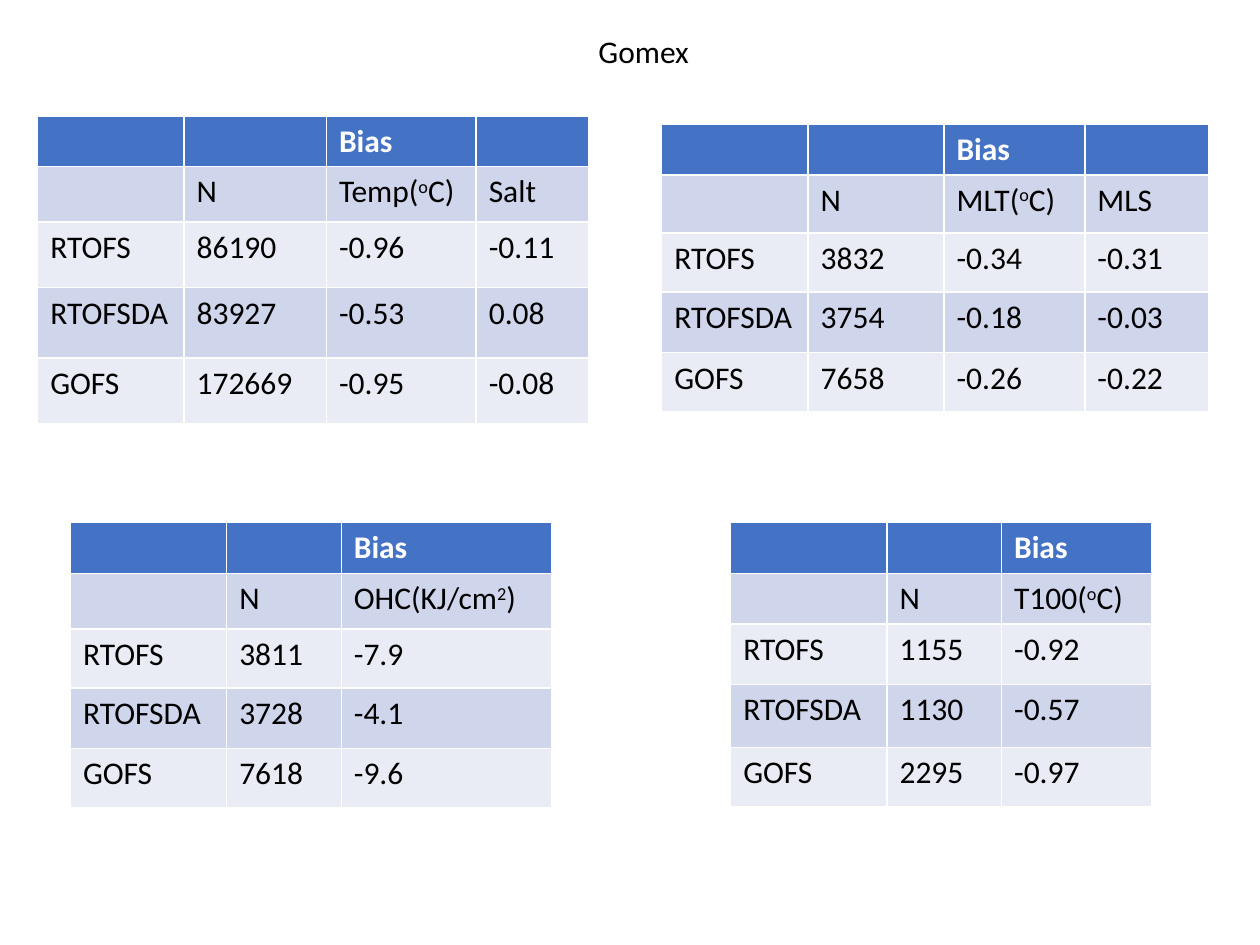
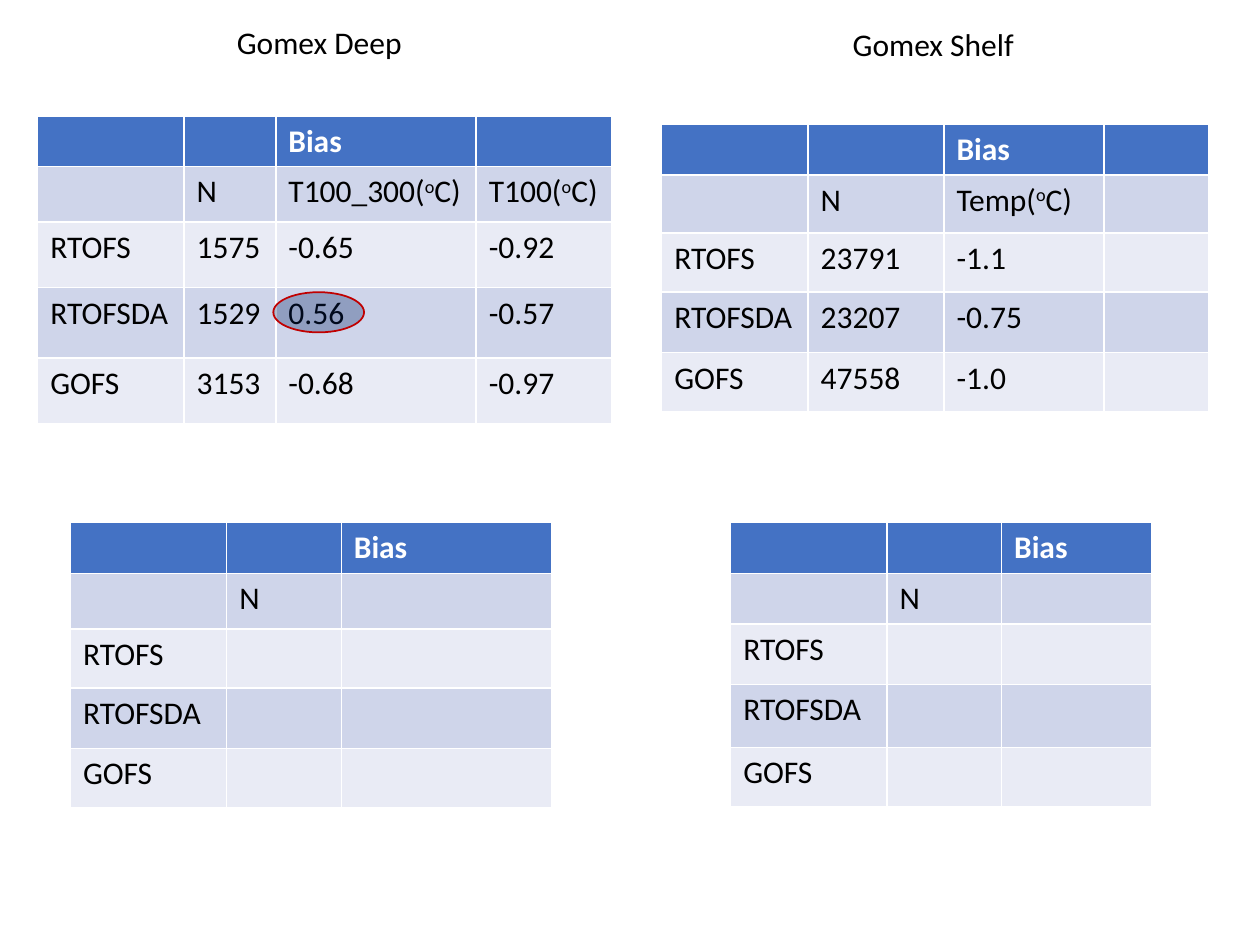
"""Build two slides of ocean model bias tables for the Gomex region."""

from lxml.etree import SubElement
from pptx import Presentation
from pptx.dml.color import RGBColor
from pptx.enum.shapes import MSO_SHAPE
from pptx.enum.text import MSO_ANCHOR, MSO_AUTO_SIZE, PP_ALIGN
from pptx.oxml.ns import qn
from pptx.util import Cm, Pt

FONT = "Calibri"
TEXT_SIZE = Pt(18)
COLORS = {
    "header": "4472C4",
    "band_dark": "CFD5EA",
    "band_light": "E9EBF5",
    "header_text": "FFFFFF",
    "text": "000000",
    "mark_fill": "002060",
    "mark_line": "C00000",
}
MODELS = ["RTOFS", "RTOFSDA", "GOFS"]

POSITIONS = {
    "top_left": {"at": (0.76, 2.34), "rows": [1.02, 1.12, 1.32, 1.42, 1.32]},
    "top_right": {"at": (13.34, 2.51), "rows": [1.02, 1.17, 1.19, 1.22, 1.19]},
    "bottom_left": {"at": (1.42, 10.52), "rows": [1.04, 1.12, 1.19, 1.22, 1.19]},
    "bottom_right": {"at": (14.73, 10.52), "rows": [1.04, 0.97, 1.22, 1.27, 1.19]},
}

# Text between carets is superscript.
SLIDES = [
    {
        "headings": [("Gomex", (11.81, 0.51, 2.36, 1.02))],
        "tables": {
            "top_left": {
                "widths": [2.95, 2.87, 3.02, 2.26],
                "columns": [
                    ("N", "86190", "83927", "172669"),
                    ("Temp(^o^C)", "-0.96", "-0.53", "-0.95"),
                    ("Salt", "-0.11", "0.08", "-0.08"),
                ],
            },
            "top_right": {
                "widths": [2.95, 2.74, 2.84, 2.49],
                "columns": [
                    ("N", "3832", "3754", "7658"),
                    ("MLT(^o^C)", "-0.34", "-0.18", "-0.26"),
                    ("MLS", "-0.31", "-0.03", "-0.22"),
                ],
            },
            "bottom_left": {
                "widths": [3.15, 2.31, 4.24],
                "columns": [
                    ("N", "3811", "3728", "7618"),
                    ("OHC(KJ/cm^2^)", "-7.9", "-4.1", "-9.6"),
                ],
            },
            "bottom_right": {
                "widths": [3.15, 2.31, 3.02],
                "columns": [
                    ("N", "1155", "1130", "2295"),
                    ("T100(^o^C)", "-0.92", "-0.57", "-0.97"),
                ],
            },
        },
        "marks": [],
    },
    {
        "headings": [
            ("Gomex Deep", (4.52, 0.33, 3.89, 1.02)),
            ("Gomex Shelf", (16.94, 0.38, 3.81, 1.02)),
        ],
        "tables": {
            "top_left": {
                "widths": [2.95, 1.85, 4.04, 2.74],
                "columns": [
                    ("N", "1575", "1529", "3153"),
                    ("T100_300(^o^C)", "-0.65", "0.56", "-0.68"),
                    ("T100(^o^C)", "-0.92", "-0.57", "-0.97"),
                ],
            },
            "top_right": {
                "widths": [2.95, 2.74, 3.23, 2.11],
                "columns": [
                    ("N", "23791", "23207", "47558"),
                    ("Temp(^o^C)", "-1.1", "-0.75", "-1.0"),
                    (),
                ],
            },
            "bottom_left": {"widths": [3.15, 2.31, 4.24], "columns": [("N",), ()]},
            "bottom_right": {"widths": [3.15, 2.31, 3.02], "columns": [("N",), ()]},
        },
        "marks": [(6.02, 5.38, 0.81, 1.83)],
    },
]


def rgb(name):
    return RGBColor.from_string(COLORS[name])


def write_text(paragraph, text, color, bold=False):
    for index, part in enumerate(text.split("^")):
        if part:
            run = paragraph.add_run()
            run.text = part
            if index % 2:
                run._r.get_or_add_rPr().set("baseline", "30000")
    paragraph.font.name = FONT
    paragraph.font.size = TEXT_SIZE
    paragraph.font.bold = bold
    paragraph.font.color.rgb = rgb(color)


def add_heading(slide, text, box, is_title):
    bounds = [Cm(length) for length in box]
    if is_title:
        shape = slide.shapes.title
        shape.left, shape.top, shape.width, shape.height = bounds
    else:
        shape = slide.shapes.add_textbox(*bounds)
    frame = shape.text_frame
    frame.word_wrap = False
    frame.auto_size = MSO_AUTO_SIZE.SHAPE_TO_FIT_TEXT
    frame.vertical_anchor = MSO_ANCHOR.TOP
    paragraph = frame.paragraphs[0]
    paragraph.alignment = PP_ALIGN.LEFT
    write_text(paragraph, text, "text")


def table_rows(columns):
    """Return the header, the quantity row and one row for each model."""
    row_count = len(MODELS) + 1
    filled = [list(column) + [""] * (row_count - len(column)) for column in columns]
    header = ["", "", "Bias"] + [""] * (len(columns) - 2)
    return [header, *zip(["", *MODELS], *filled)]


def add_bias_table(slide, position, widths, columns):
    left, top = position["at"]
    heights = position["rows"]
    table = slide.shapes.add_table(
        len(heights), len(widths), Cm(left), Cm(top), Cm(sum(widths)), Cm(sum(heights))
    ).table
    for column, width in zip(table.columns, widths):
        column.width = Cm(width)
    for row, height in zip(table.rows, heights):
        row.height = Cm(height)
    for row_index, texts in enumerate(table_rows(columns)):
        is_header = row_index == 0
        band = "header" if is_header else "band_dark" if row_index % 2 else "band_light"
        color = "header_text" if is_header else "text"
        for column_index, text in enumerate(texts):
            cell = table.cell(row_index, column_index)
            cell.fill.solid()
            cell.fill.fore_color.rgb = rgb(band)
            write_text(cell.text_frame.paragraphs[0], text, color, is_header)


def add_mark(slide, box):
    ellipse = slide.shapes.add_shape(MSO_SHAPE.OVAL, *[Cm(length) for length in box])
    ellipse.rotation = 270
    ellipse.shadow.inherit = False
    ellipse.fill.solid()
    ellipse.fill.fore_color.rgb = rgb("mark_fill")
    fill_color = ellipse.fill._xPr.find(qn("a:solidFill"))[0]
    SubElement(fill_color, qn("a:alpha"), val="30000")
    ellipse.line.color.rgb = rgb("mark_line")
    ellipse.line.width = Pt(1)


def main():
    presentation = Presentation()
    presentation.slide_width, presentation.slide_height = Cm(25.4), Cm(19.05)
    title_only = presentation.slide_layouts[5]
    for content in SLIDES:
        slide = presentation.slides.add_slide(title_only)
        for index, (text, box) in enumerate(content["headings"]):
            add_heading(slide, text, box, is_title=index == 0)
        for name, table in content["tables"].items():
            add_bias_table(slide, POSITIONS[name], **table)
        for box in content["marks"]:
            add_mark(slide, box)
    presentation.save("out.pptx")


if __name__ == "__main__":
    main()
